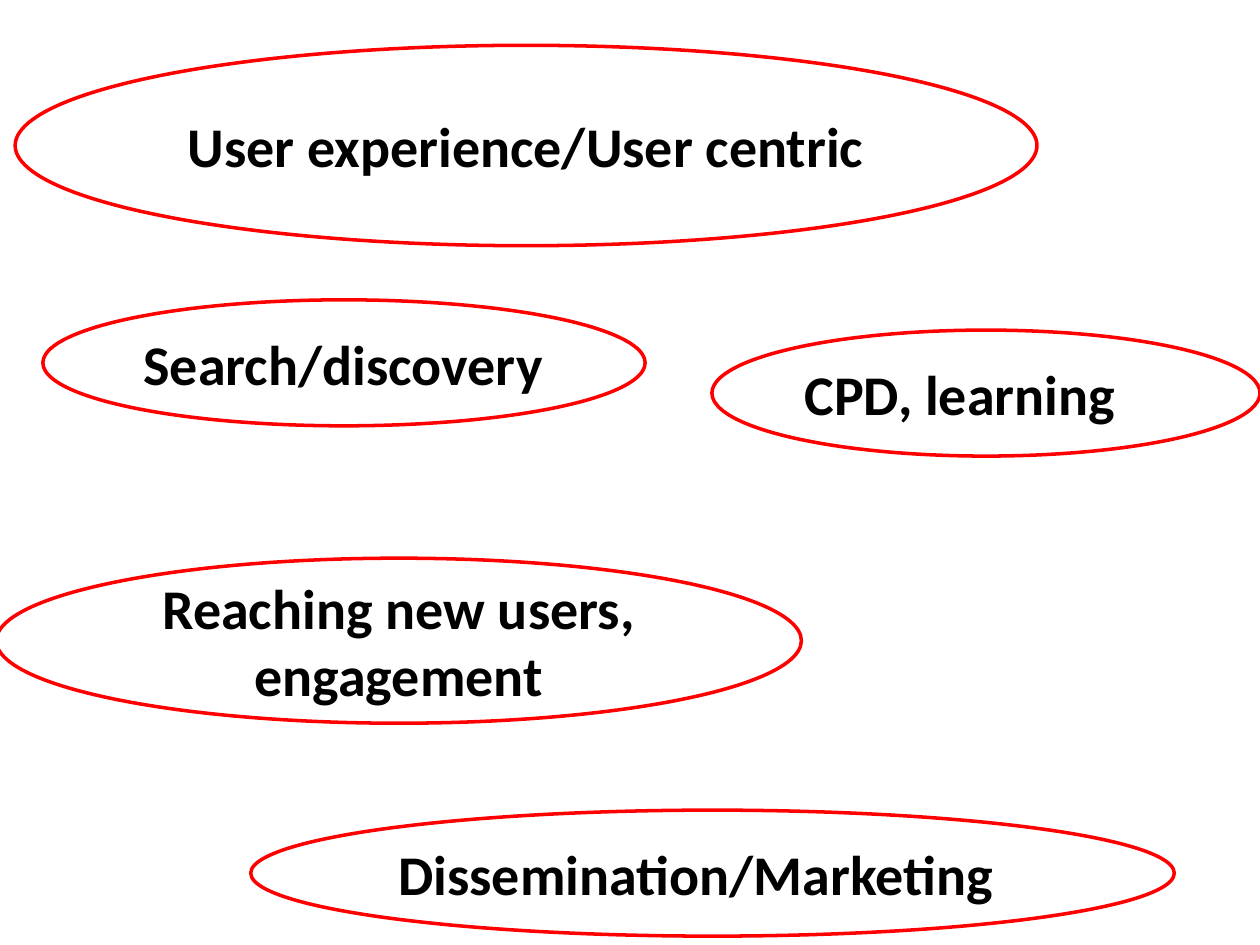
from dataclasses import dataclass

from pptx import Presentation
from pptx.dml.color import RGBColor
from pptx.enum.shapes import MSO_SHAPE as Shape
from pptx.enum.text import MSO_ANCHOR as Anchor, PP_ALIGN as Align
from pptx.util import Inches, Pt


@dataclass(frozen=True)
class Theme:
    """Colours, type and line sizes of the deck."""
    paper: RGBColor = RGBColor(255, 255, 255)
    ink: RGBColor = RGBColor(0, 0, 0)
    accent: RGBColor = RGBColor(255, 0, 0)
    font: str = "Calibri"
    text_size: int = 32
    outline: int = 2


THEME = Theme()
COLUMNS, ROWS = 100, 75

TOPICS = [
    ("User experience/User centric", Align.CENTER, (1.2, 3.6, 81.1, 15.9)),
    ("Search/discovery", Align.LEFT, (3.4, 23.8, 47.8, 10)),
    ("Reaching new users, engagement", Align.CENTER, (-0.3, 44.3, 63.9, 13.1)),
    ("Dissemination/Marketing", Align.LEFT, (19.9, 64.3, 73.3, 10)),
    ("CPD, learning", Align.LEFT, (56.5, 26.2, 43.5, 10)),
]


def add_topic(page, text, align, box):
    """Draw one outlined ellipse with its topic inside the given box."""
    oval = page.shapes.add_shape(Shape.OVAL, *box)
    oval.shadow.inherit = False
    oval.fill.solid()
    oval.fill.fore_color.rgb = THEME.paper
    oval.line.color.rgb = THEME.accent
    oval.line.width = Pt(THEME.outline)
    frame = oval.text_frame
    frame.word_wrap = True
    frame.vertical_anchor = Anchor.MIDDLE
    para = frame.paragraphs[0]
    para.alignment = align
    span = para.add_run()
    span.text = text
    span.font.name = THEME.font
    span.font.size = Pt(THEME.text_size)
    span.font.bold = True
    span.font.color.rgb = THEME.ink


def add_topic_map(page, box):
    """Scatter the topics over the grid of the given box."""
    left, top, width, height = box
    column, row = width / COLUMNS, height / ROWS
    for text, align, (x, y, columns, rows) in TOPICS:
        place = (left + x * column, top + y * row, columns * column, rows * row)
        add_topic(page, text, align, [round(length) for length in place])


def main():
    """Build the one-slide deck and save it."""
    deck = Presentation()
    deck.slide_width, deck.slide_height = Inches(10), Inches(7.5)
    page = deck.slides.add_slide(deck.slide_layouts.get_by_name("Blank"))
    add_topic_map(page, (0, 0, deck.slide_width, deck.slide_height))
    deck.save("out.pptx")


if __name__ == "__main__":
    main()
